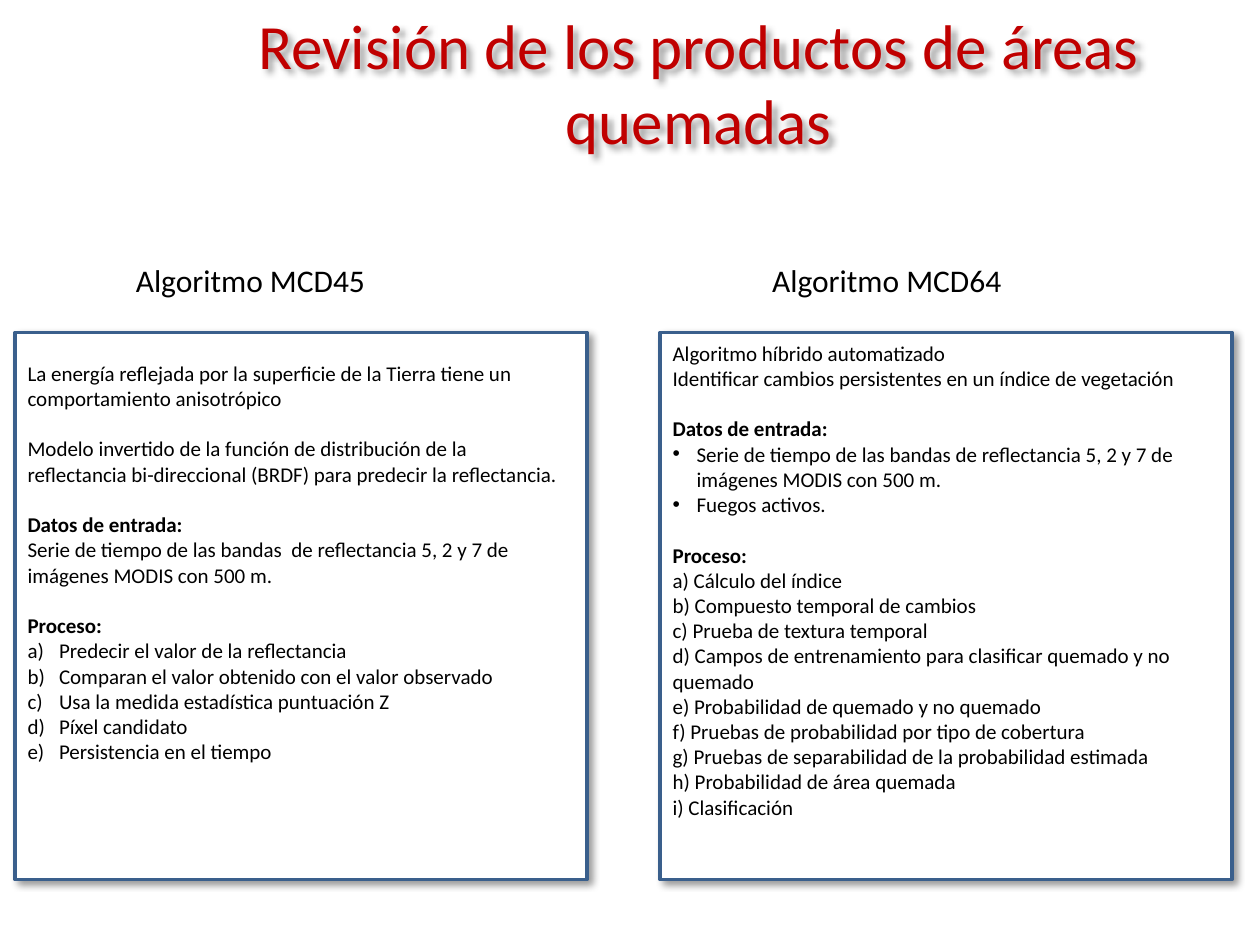
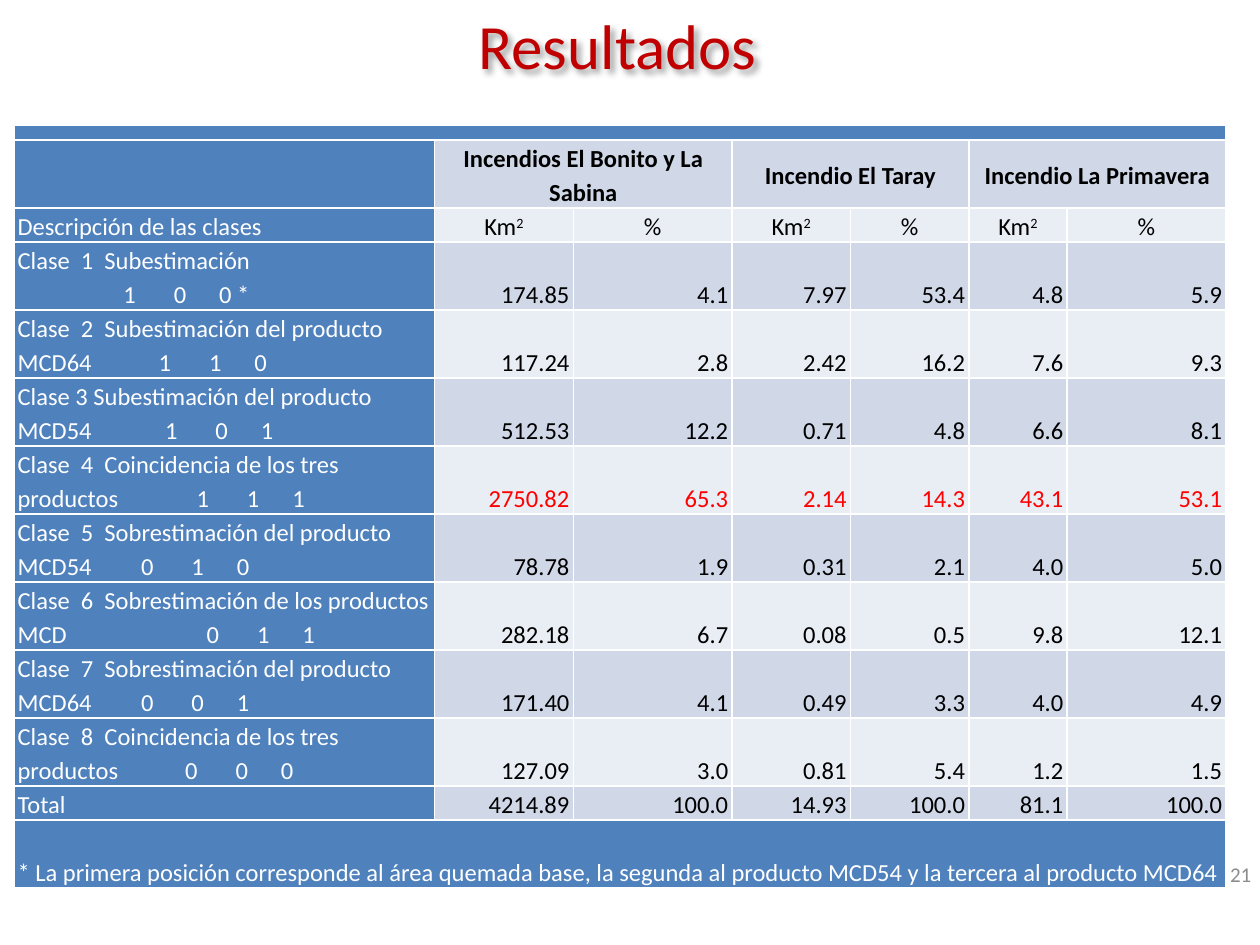
from lxml import etree
from pptx import Presentation
from pptx.dml.color import RGBColor
from pptx.enum.shapes import MSO_SHAPE
from pptx.enum.text import MSO_ANCHOR, MSO_AUTO_SIZE, PP_ALIGN
from pptx.oxml.ns import qn
from pptx.util import Inches, Pt

COLORS = {
    "title": "C00000", "ink": "000000", "white": "FFFFFF", "edge": "3A5F8C",
    "blue": "4F81BD", "dark": "D0D8E8", "light": "E9EDF4",
    "red": "FF0000", "gray": "8C8C8C",
}
FONT = "Calibri"
LINE_GAP = 14.5  # height of one 12 pt line

# Slide 1 text: (kind, words); "gap" and "head" stand one line apart
MCD45 = [
    ("text", "La energía reflejada por la superficie de la Tierra tiene un comportamiento anisotrópico"),
    ("gap", "Modelo invertido de la función de distribución de la reflectancia bi-direccional (BRDF) para predecir la reflectancia."),
    ("head", "Datos de entrada:"),
    ("text", "Serie de tiempo de las bandas  de reflectancia 5, 2 y 7 de imágenes MODIS con 500 m."),
    ("head", "Proceso:"),
    ("letter", "Predecir el valor de la reflectancia"),
    ("letter", "Comparan el valor obtenido con el valor observado"),
    ("letter", "Usa la medida estadística puntuación Z"),
    ("letter", "Píxel candidato"),
    ("letter", "Persistencia en el tiempo"),
]
MCD64 = [
    ("text", "Algoritmo híbrido automatizado"),
    ("text", "Identificar cambios persistentes en un índice de vegetación"),
    ("head", "Datos de entrada:"),
    ("dot", "Serie de tiempo de las bandas de reflectancia 5, 2 y 7 de imágenes MODIS con 500 m."),
    ("dot", "Fuegos activos."),
    ("head", "Proceso:"),
    ("text", "a) Cálculo del índice"),
    ("text", "b) Compuesto temporal de cambios"),
    ("text", "c) Prueba de textura temporal"),
    ("text", "d) Campos de entrenamiento para clasificar quemado y no quemado"),
    ("text", "e) Probabilidad de quemado y no quemado"),
    ("text", "f) Pruebas de probabilidad por tipo de cobertura"),
    ("text", "g) Pruebas de separabilidad de la probabilidad estimada"),
    ("text", "h) Probabilidad de área quemada"),
    ("text", "i) Clasificación"),
]
BULLETS = {
    "letter": (0.25, "buAutoNum", {"type": "alphaLcParenR"}),
    "dot": (0.19, "buChar", {"char": "•"}),
}

# Slide 2 table
FIRES = ["Incendios El Bonito y La Sabina", "Incendio El Taray", "Incendio La Primavera"]
# (label, first tab stop, values)
CLASSES = [
    ("Clase  1  Subestimación\v\t1\t0\t0 *", 0.84, "174.85 4.1 7.97 53.4 4.8 5.9"),
    ("Clase  2  Subestimación del producto MCD64\t1\t1\t0", 1.12, "117.24 2.8 2.42 16.2 7.6 9.3"),
    ("Clase 3 Subestimación del producto MCD54\t1\t0\t1", 1.17, "512.53 12.2 0.71 4.8 6.6 8.1"),
    ("Clase  4  Coincidencia de los tres productos\t1\t1\t1", 1.42, "2750.82 65.3 2.14 14.3 43.1 53.1"),
    ("Clase  5  Sobrestimación del producto MCD54\t0\t1\t0", 0.98, "78.78 1.9 0.31 2.1 4.0 5.0"),
    ("Clase  6  Sobrestimación de los productos MCD\t0\t1\t1", 1.5, "282.18 6.7 0.08 0.5 9.8 12.1"),
    ("Clase  7  Sobrestimación del producto MCD64\t0\t0\t1", 0.98, "171.40 4.1 0.49 3.3 4.0 4.9"),
    ("Clase  8  Coincidencia de los tres productos\t0\t0\t0", 1.33, "127.09 3.0 0.81 5.4 1.2 1.5"),
    ("Total", None, "4214.89 100.0 14.93 100.0 81.1 100.0"),
]
NOTE = ("* La primera posición corresponde al área quemada base, la segunda "
        "al producto MCD54 y la tercera al producto MCD64")
COLS = [3.34, 1.1, 1.26, 0.94, 0.94, 0.78, 1.26]
ROWS = [0.12, 0.54, 0.27] + [0.54] * 8 + [0.27, 0.54]


def add(parent, tag, **attrs):
    return etree.SubElement(parent, qn("a:" + tag), attrs)


class Deck:
    def __init__(self):
        self.prs = Presentation()
        self.prs.slide_width, self.prs.slide_height = Inches(10), Inches(7.5)
        self.slide = None

    def page(self):
        self.slide = self.prs.slides.add_slide(self.prs.slide_layouts[6])

    def color(self, name):
        return RGBColor.from_string(COLORS[name])

    def style(self, par, size, color="ink", bold=False):
        for run in par.runs:
            font = run.font
            font.name, font.size, font.bold = FONT, Pt(size), bold
            font.color.rgb = self.color(color)

    def shade(self, shape):
        effects = add(shape.fill._xPr, "effectLst")
        shadow = add(effects, "outerShdw", blurRad=str(Pt(4)), dist=str(Pt(3)),
                     dir="2700000", algn="tl", rotWithShape="0")
        add(add(shadow, "srgbClr", val=COLORS["ink"]), "alpha", val="40000")

    def box(self, *at):
        shape = self.slide.shapes.add_shape(MSO_SHAPE.RECTANGLE, *map(Inches, at))
        shape.fill.solid()
        shape.fill.fore_color.rgb = self.color("white")
        shape.line.color.rgb = self.color("edge")
        shape.line.width = Pt(2)
        self.shade(shape)

    def text(self, at, words, size, color="ink", align=PP_ALIGN.LEFT, wrap=True):
        shape = self.slide.shapes.add_textbox(*map(Inches, at))
        frame = shape.text_frame
        frame.text = words
        frame.word_wrap = wrap
        frame.auto_size = MSO_AUTO_SIZE.SHAPE_TO_FIT_TEXT
        frame.paragraphs[0].alignment = align
        self.style(frame.paragraphs[0], size, color)
        return shape

    def title(self, at, words, wrap=True):
        align = PP_ALIGN.CENTER if wrap else PP_ALIGN.LEFT
        self.shade(self.text(at, words, 36, "title", align, wrap))

    def body(self, at, items):
        frame = self.text(at, items[0][1], 12).text_frame
        for kind, words in items[1:]:
            par = frame.add_paragraph()
            par.text = words
            if kind in ("gap", "head"):
                par.space_before = Pt(LINE_GAP)
            if kind in BULLETS:
                indent, tag, attrs = BULLETS[kind]
                props = par._p.get_or_add_pPr()
                props.set("marL", str(Inches(indent)))
                props.set("indent", str(-Inches(indent)))
                add(props, "buFont", typeface="Arial" if kind == "dot" else "+mj-lt")
                add(props, tag, **attrs)
            self.style(par, 12, bold=kind == "head")

    def grid(self, left, top, cols, rows):
        frame = self.slide.shapes.add_table(
            len(rows), len(cols), Inches(left), Inches(top),
            Inches(sum(cols)), Inches(sum(rows)))
        table = frame.table
        for col, width in zip(table.columns, cols):
            col.width = Inches(width)
        for row, height in zip(table.rows, rows):
            row.height = Inches(height)
        for cell in table.iter_cells():
            cell.margin_left = cell.margin_right = Inches(0.03)
            cell.margin_top = cell.margin_bottom = 0
            for side in ("lnL", "lnR", "lnT", "lnB"):
                line = add(cell._tc.get_or_add_tcPr(), side, w=str(Pt(1)))
                add(add(line, "solidFill"), "srgbClr", val=COLORS["white"])
            add(cell.text_frame.paragraphs[0]._p, "endParaRPr", sz="700")
            self.fill(cell, "blue")
        return table

    def fill(self, cell, color):
        cell.fill.solid()
        cell.fill.fore_color.rgb = self.color(color)

    def cell(self, cell, words, fill="blue", color="white", align=PP_ALIGN.LEFT,
             anchor=MSO_ANCHOR.BOTTOM, bold=False, power="", tab=None):
        self.fill(cell, fill)
        cell.vertical_anchor = anchor
        par = cell.text_frame.paragraphs[0]
        par.text = words
        par.alignment, par.line_spacing = align, 1.15
        if tab is not None:
            stops = add(par._p.get_or_add_pPr(), "tabLst")
            for step in (0, 0.4, 0.76):
                add(stops, "tab", pos=str(Inches(tab + step)), algn="l")
        if power:
            run = par.add_run()
            run.text = power
            run.font._element.set("baseline", "30000")
        self.style(par, 14, color, bold)


def methods(deck):
    deck.page()
    # Frames
    for left in (0.12, 5.24):
        deck.box(left, 2.64, 4.54, 4.34)
    deck.title((1.09, 0, 8.91, 1.31), "Revisión de los productos de áreas quemadas")
    # Headings and text
    for left, name in ((0.98, "Algoritmo MCD45"), (6.03, "Algoritmo MCD64")):
        deck.text((left, 2.02, 2.04, 0.4), name, 18, wrap=False)
    deck.body((0.12, 2.81, 4.41, 3.33), MCD45)
    deck.body((5.24, 2.65, 4.54, 4.54), MCD64)


def results(deck):
    deck.page()
    deck.title((3.7, 0, 2.43, 0.71), "Resultados", wrap=False)
    table = deck.grid(0.11, 0.99, COLS, ROWS)
    last = len(ROWS) - 1
    # Full-width rows
    for row in (0, last):
        table.cell(row, 0).merge(table.cell(row, len(COLS) - 1))
    deck.cell(table.cell(last, 0), NOTE)
    # Headers
    mid = {"align": PP_ALIGN.CENTER, "anchor": MSO_ANCHOR.MIDDLE, "color": "ink"}
    deck.cell(table.cell(2, 0), "Descripción de las clases")
    for i, fire in enumerate(FIRES):
        col = 1 + 2 * i
        table.cell(1, col).merge(table.cell(1, col + 1))
        deck.cell(table.cell(1, col), fire, "dark", bold=True, **mid)
        deck.cell(table.cell(2, col), "Km", "light", power="2", **mid)
        deck.cell(table.cell(2, col + 1), "%", "light", **mid)
    # Classes
    for row, (label, tab, values) in enumerate(CLASSES, 3):
        deck.cell(table.cell(row, 0), label, tab=tab)
        fill = "dark" if row % 2 else "light"
        color = "red" if label.startswith("Clase  4") else "ink"
        for col, value in enumerate(values.split(), 1):
            deck.cell(table.cell(row, col), value, fill, color, PP_ALIGN.RIGHT)
    # Page number
    number = deck.text((7.7, 6.74, 2.33, 0.4), "21", 12, "gray", PP_ALIGN.RIGHT)
    number.text_frame.auto_size = MSO_AUTO_SIZE.NONE
    number.text_frame.vertical_anchor = MSO_ANCHOR.MIDDLE


def main():
    deck = Deck()
    methods(deck)
    results(deck)
    deck.prs.save("out.pptx")


if __name__ == "__main__":
    main()
